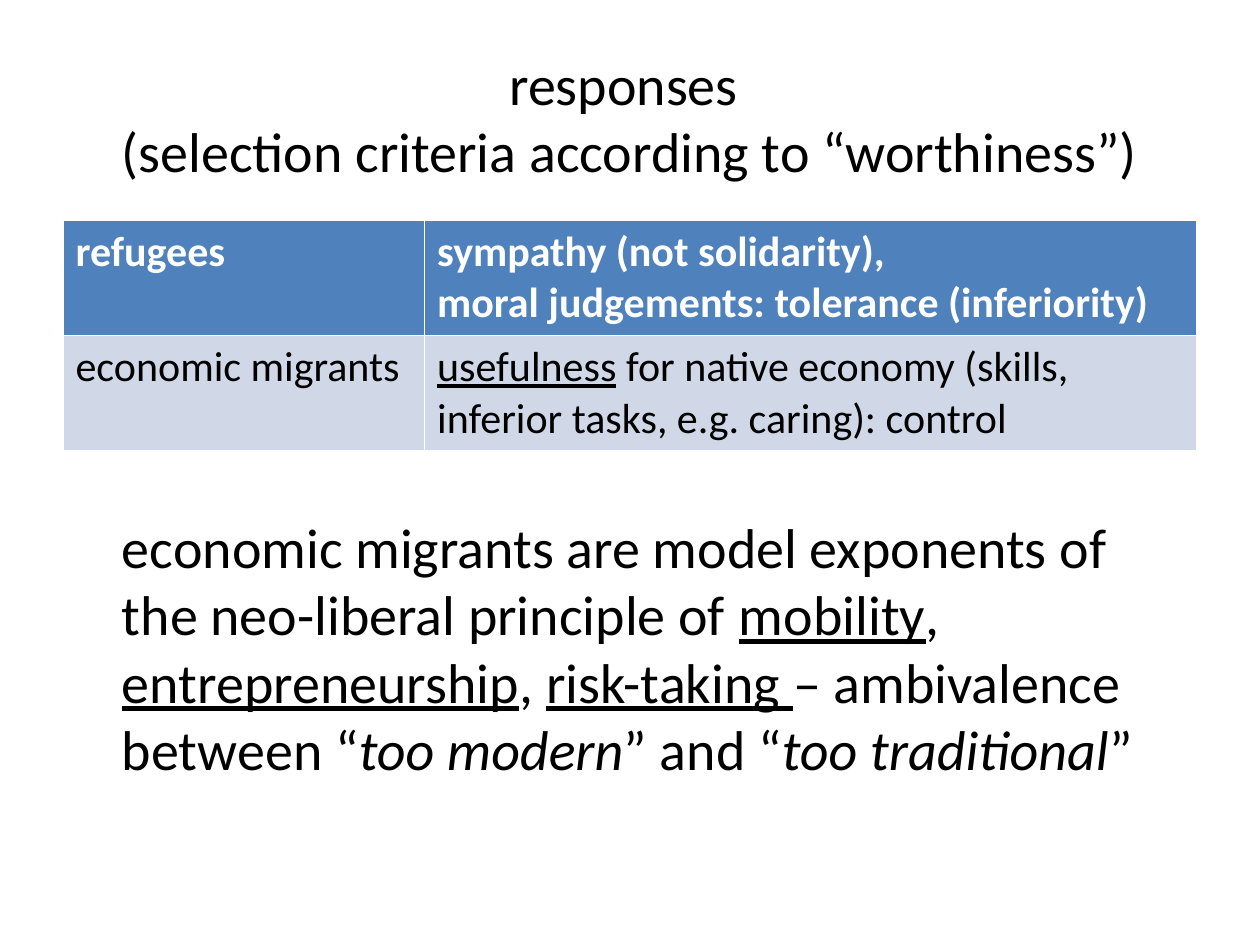
from pptx import Presentation
from pptx.dml.color import RGBColor
from pptx.enum.text import MSO_ANCHOR, MSO_AUTO_SIZE, PP_ALIGN
from pptx.util import Inches, Pt

COLORS = {"text": "000000", "header_text": "FFFFFF", "header": "4F81BD", "body": "D0D8E8"}
FONT = "Calibri"


def write_text(frame, paragraphs, size, color="text", bold=False, align=PP_ALIGN.LEFT):
    """Write paragraphs, each a list of (text, style) runs; style is "", "u" or "i"."""
    for index, runs in enumerate(paragraphs):
        paragraph = frame.add_paragraph() if index else frame.paragraphs[0]
        paragraph.alignment = align
        for text, style in runs:
            run = paragraph.add_run()
            run.text = text
            font = run.font
            font.name, font.size, font.bold = FONT, Pt(size), bold
            font.underline, font.italic = style == "u", style == "i"
            font.color.rgb = RGBColor.from_string(COLORS[color])


def place_title(slide, left, top, width, height):
    """Move the title placeholder into its box and fill in the heading."""
    title = slide.shapes.title
    title.left, title.top, title.width, title.height = left, top, width, height
    frame = title.text_frame
    frame.auto_size = MSO_AUTO_SIZE.NONE
    frame.vertical_anchor = MSO_ANCHOR.MIDDLE
    lines = ["responses ", "(selection criteria according to “worthiness”)"]
    write_text(frame, [[(line, "")] for line in lines], 32, align=PP_ALIGN.CENTER)


def add_responses_table(slide, left, top, width, height):
    """Add the table of responses to each group of migrants."""
    rows = [
        [
            [[("refugees", "")]],
            [
                [("sympathy (not solidarity),", "")],
                [("moral judgements: tolerance (inferiority)", "")],
            ],
        ],
        [
            [[("economic migrants", "")]],
            [[
                ("usefulness", "u"),
                (" for native economy (skills, inferior tasks, e.g. caring): control", ""),
            ]],
        ],
    ]
    table = slide.shapes.add_table(len(rows), 2, left, top, width, height).table
    group_width = Inches(2.87)
    table.columns[0].width = group_width
    table.columns[1].width = width - group_width
    for row_index, row in enumerate(rows):
        is_header = row_index == 0
        for column_index, paragraphs in enumerate(row):
            cell = table.cell(row_index, column_index)
            cell.fill.solid()
            fill = COLORS["header" if is_header else "body"]
            cell.fill.fore_color.rgb = RGBColor.from_string(fill)
            color = "header_text" if is_header else "text"
            write_text(cell.text_frame, paragraphs, 24, color=color, bold=is_header)


def add_conclusion(slide, left, top, width, height):
    """Add the concluding statement below the table."""
    frame = slide.shapes.add_textbox(left, top, width, height).text_frame
    frame.word_wrap = True
    frame.auto_size = MSO_AUTO_SIZE.SHAPE_TO_FIT_TEXT
    runs = [
        ("economic migrants are model exponents of the neo-liberal principle of ", ""),
        ("mobility", "u"),
        (", ", ""),
        ("entrepreneurship", "u"),
        (", ", ""),
        ("risk-taking ", "u"),
        ("– ambivalence between “", ""),
        ("too modern", "i"),
        ("” and “", ""),
        ("too traditional", "i"),
        ("”", ""),
    ]
    write_text(frame, [runs], 32)


def main():
    """Build the slide and save it."""
    presentation = Presentation()
    presentation.slide_width, presentation.slide_height = Inches(10), Inches(7.5)
    slide = presentation.slides.add_slide(presentation.slide_layouts[5])
    place_title(slide, Inches(0.5), Inches(0.3), Inches(9), Inches(1.25))
    add_responses_table(slide, Inches(0.5), Inches(1.75), Inches(9), Inches(1.8))
    add_conclusion(slide, Inches(0.87), Inches(4.02), Inches(8.63), Inches(2.26))
    presentation.save("out.pptx")


if __name__ == "__main__":
    main()
